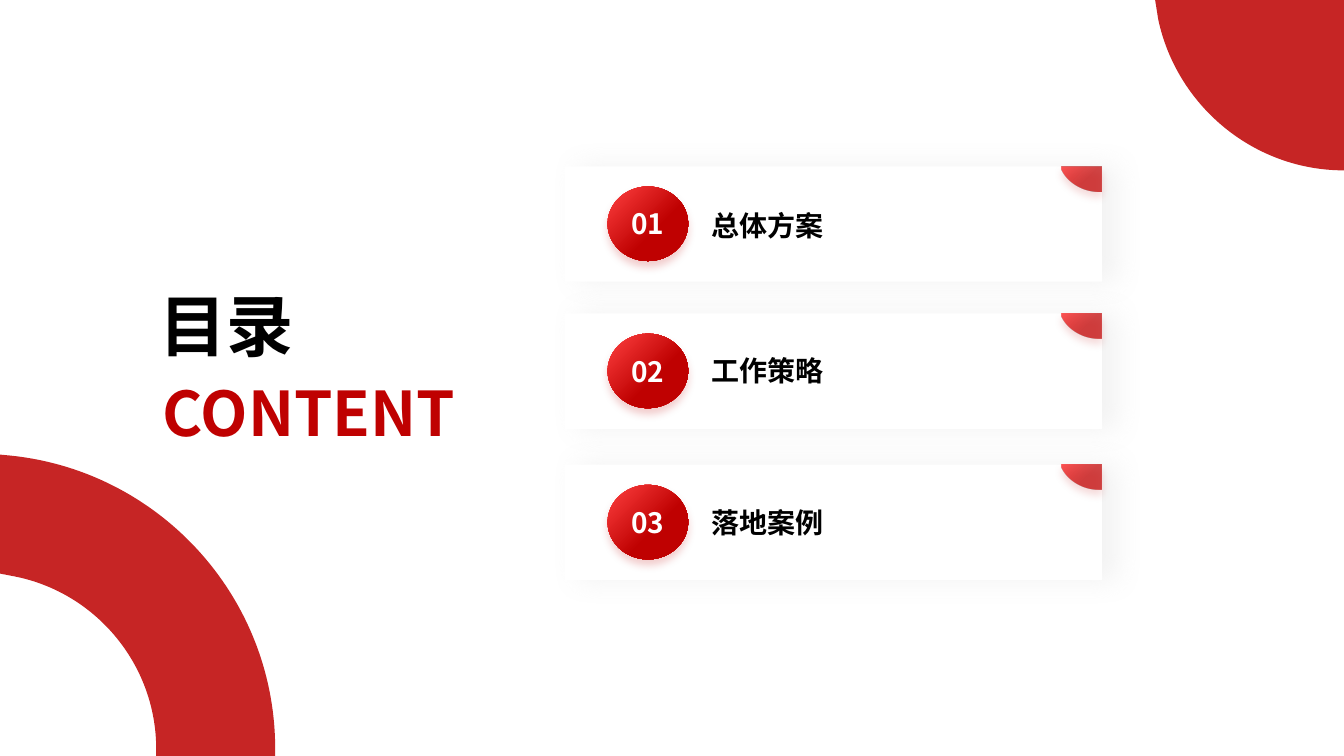
from lxml.etree import SubElement
from pptx import Presentation
from pptx.dml.color import RGBColor
from pptx.enum.shapes import MSO_SHAPE as SHAPE
from pptx.enum.text import MSO_ANCHOR as ANCHOR, MSO_AUTO_SIZE as AUTO, PP_ALIGN as ALIGN
from pptx.oxml.ns import qn
from pptx.util import Pt

FONT = "Noto Sans CJK SC"
BLACK = RGBColor(0x00, 0x00, 0x00)
WHITE = RGBColor(0xFF, 0xFF, 0xFF)
GREY = RGBColor(0x80, 0x80, 0x80)
BRICK = RGBColor(0xC6, 0x25, 0x25)
CRIMSON = RGBColor(0xBF, 0x01, 0x01)
CORAL = RGBColor(0xFE, 0x41, 0x41)

SLIDE_W, SLIDE_H = 960, 540
CARD_X, CARD_W, CARD_H = 403.5, 383.5, 82.4
# Card top, number, label, then the label's offset, height and line spacing.
CARDS = [
    (118.8, "01", "总体方案", 21.6, 36, 1.2),
    (223.9, "02", "工作策略", 25.2, 31.7, None),
    (331.9, "03", "落地案例", 20.5, 36, 1.2),
]

# Outlines relative to their box: 2 numbers are a line, 6 a Bézier curve.
RING = [(0, 0), (0, 85), (10.8, 87.1), (68.4, 98.6, 111.6, 149.8, 111.6, 210.2),
        (111.6, 215.3), (196.6, 215.3), (196.6, 210.2),
        (196.6, 101.5, 113.8, 11.5, 7.2, 0.7)]
DISC = [(134.9, 0), (0, 0), (2.2, 13.7), (15.1, 74.9, 69.8, 121.7, 134.9, 121.7)]
CORNER = [(0, 0), (28.8, 0), (28.8, 18), (26.6, 18), (15.1, 18, 4.3, 11.5, 0, 2.2)]


def add_outline(shapes, x, y, segments):
    """Draw the outline through its nodes, then bend the curved segments."""
    nodes = [(Pt(x + seg[-2]), Pt(y + seg[-1])) for seg in segments]
    builder = shapes.build_freeform(*nodes[0])
    builder.add_line_segments(nodes[1:], close=True)
    sp = builder.convert_to_shape()
    steps = list(next(sp._element.iter(qn("a:path"))))
    for step, seg in zip(steps, segments):
        if len(seg) == 6:
            step.tag = qn("a:cubicBezTo")
            for child in list(step):
                step.remove(child)
            for px, py in zip(seg[::2], seg[1::2]):
                SubElement(step, qn("a:pt"), x=str(Pt(px)), y=str(Pt(py)))
    return sp


def clear_style(sp):
    sp.line.fill.background()
    sp.shadow.inherit = False


def fill_solid(sp, color):
    clear_style(sp)
    sp.fill.solid()
    sp.fill.fore_color.rgb = color


def add_alpha(color_el, percent):
    SubElement(color_el, qn("a:alpha"), val=str(percent * 1000))


def fill_gradient(sp, alphas=(100, 100)):
    clear_style(sp)
    sp.fill.gradient()
    sp.fill.gradient_angle = 315
    for stop, color, pos in zip(sp.fill.gradient_stops, (CORAL, CRIMSON), (0, 0.6)):
        stop.color.rgb = color
        stop.position = pos
    for el, alpha in zip(sp._element.spPr.iter(qn("a:srgbClr")), alphas):
        if alpha < 100:
            add_alpha(el, alpha)


def add_shadow(sp, color, alpha, blur, dist, angle):
    effects = sp._element.spPr.find(qn("a:effectLst"))
    outer = SubElement(effects, qn("a:outerShdw"), blurRad=str(Pt(blur)), dist=str(Pt(dist)),
                       dir=str(angle * 60000), algn="ctr", rotWithShape="0")
    add_alpha(SubElement(outer, qn("a:srgbClr"), val=str(color)), alpha)


def set_text(sp, text, size, color, align, spacing=None, wrap=True,
             anchor=ANCHOR.TOP, fit=AUTO.SHAPE_TO_FIT_TEXT):
    tf = sp.text_frame
    tf.text = text
    tf.word_wrap = wrap
    tf.vertical_anchor = anchor
    tf.auto_size = fit
    p = tf.paragraphs[0]
    p.alignment = align
    p.line_spacing = spacing
    r = p.runs[0]
    r.font.size, r.font.bold, r.font.name = Pt(size), True, FONT
    r.font.color.rgb = color
    SubElement(r._r.get_or_add_rPr(), qn("a:ea"), typeface=FONT)
    return p


def add_decoration(s):
    for x, y, outline in ((0, SLIDE_H - 215.3, RING), (SLIDE_W - 134.9, 0, DISC)):
        fill_solid(add_outline(s.shapes, x, y, outline), BRICK)


def add_heading(s, x, y):
    title = s.shapes.title
    title.left, title.top, title.width, title.height = Pt(x), Pt(y), Pt(119.5), Pt(65.5)
    set_text(title, "目录", 48, BLACK, ALIGN.CENTER)
    subtitle = s.shapes.add_textbox(Pt(x + 6.9), Pt(y + 71), Pt(255.6), Pt(55.4))
    set_text(subtitle, "CONTENT", 44, CRIMSON, ALIGN.JUSTIFY, spacing=0.9)


def add_card(s, x, y, w, h, number, label, label_dy, label_h, spacing):
    shapes = s.shapes.add_group_shape().shapes
    panel = shapes.add_shape(SHAPE.RECTANGLE, Pt(x), Pt(y), Pt(w), Pt(h))
    fill_solid(panel, WHITE)
    add_shadow(panel, GREY, 10, 20, 10, 0)

    badge = shapes.add_shape(SHAPE.OVAL, Pt(x + 30.5), Pt(y + 14.4), Pt(57.6), Pt(53.3))
    fill_gradient(badge)
    add_shadow(badge, CRIMSON, 20, 6, 4, 90)
    set_text(badge, number, 20, WHITE, ALIGN.CENTER, wrap=False, anchor=ANCHOR.MIDDLE,
             fit=AUTO.NONE)

    box = shapes.add_textbox(Pt(x + 97.6), Pt(y + label_dy), Pt(267.8), Pt(label_h))
    p = set_text(box, label, 20, BLACK, ALIGN.LEFT, spacing)
    p.space_before = Pt(10)

    corner = add_outline(shapes, x + w - 28.8, y, CORNER)
    fill_gradient(corner, alphas=(90, 72))
    add_shadow(corner, CRIMSON, 20, 6, 4, 90)


def main():
    prs = Presentation()
    prs.slide_width, prs.slide_height = Pt(SLIDE_W), Pt(SLIDE_H)
    s = prs.slides.add_slide(prs.slide_layouts[5])
    add_heading(s, 102.2, 199.4)
    add_decoration(s)
    for y, *content in CARDS:
        add_card(s, CARD_X, y, CARD_W, CARD_H, *content)
    prs.save("out.pptx")


if __name__ == "__main__":
    main()
